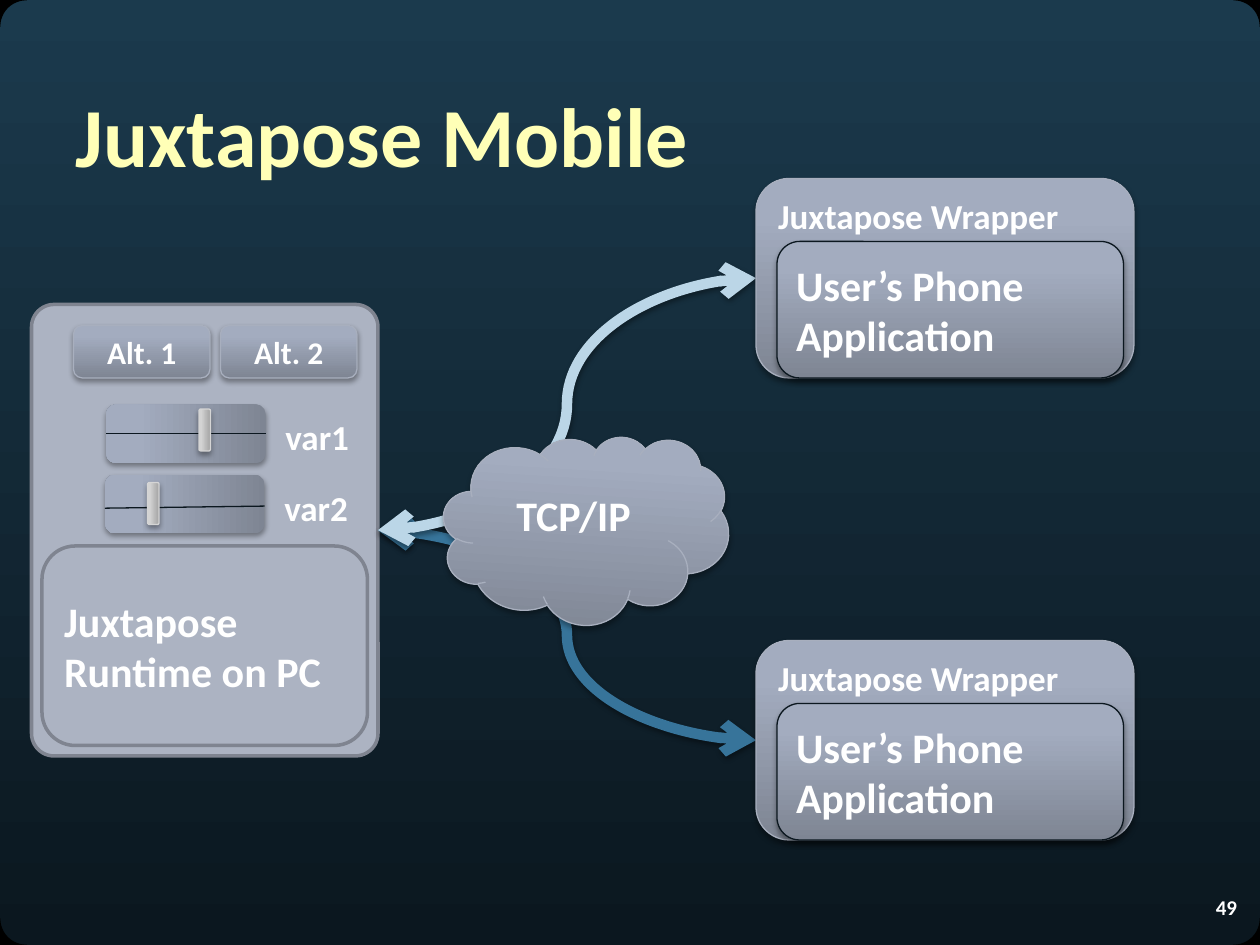
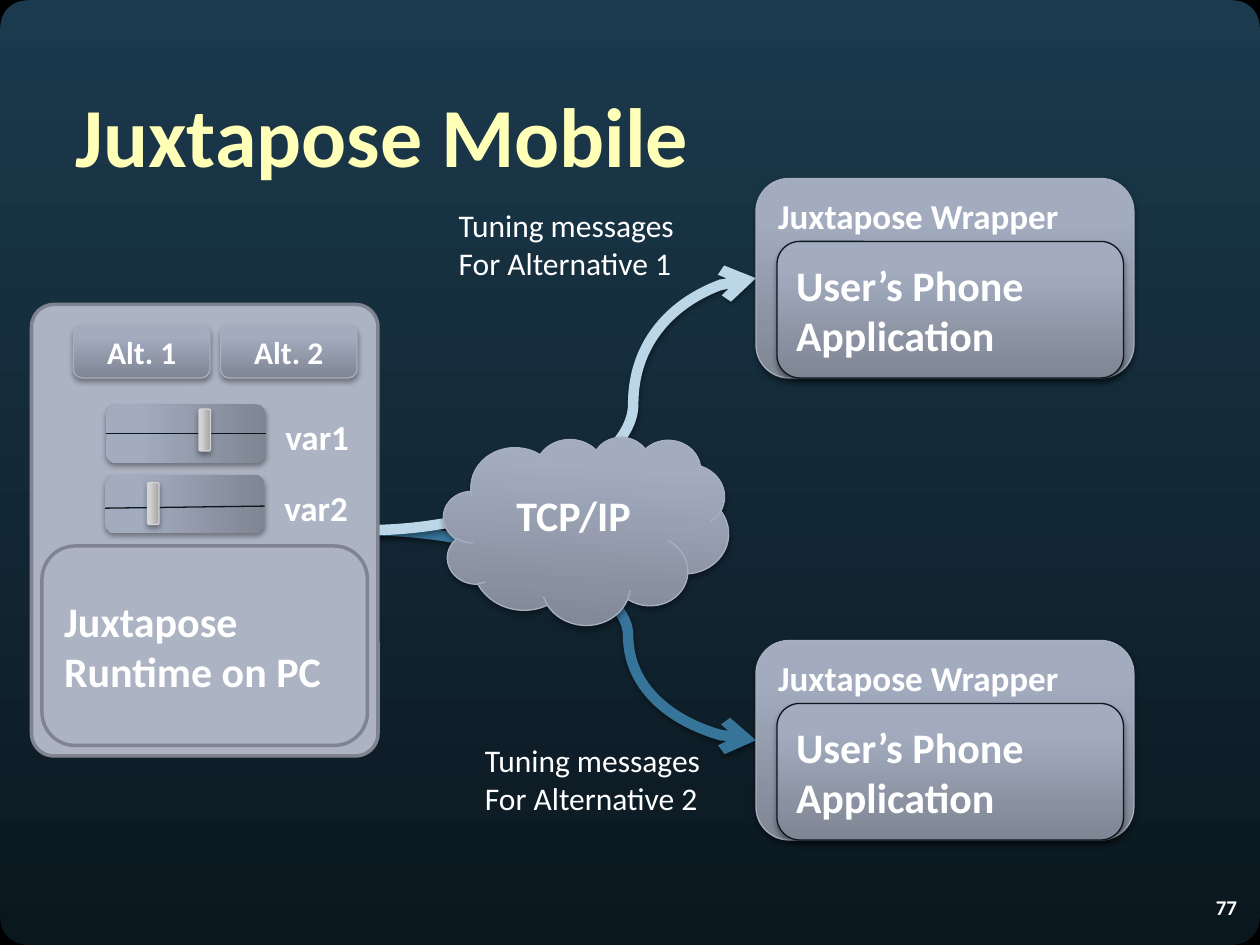
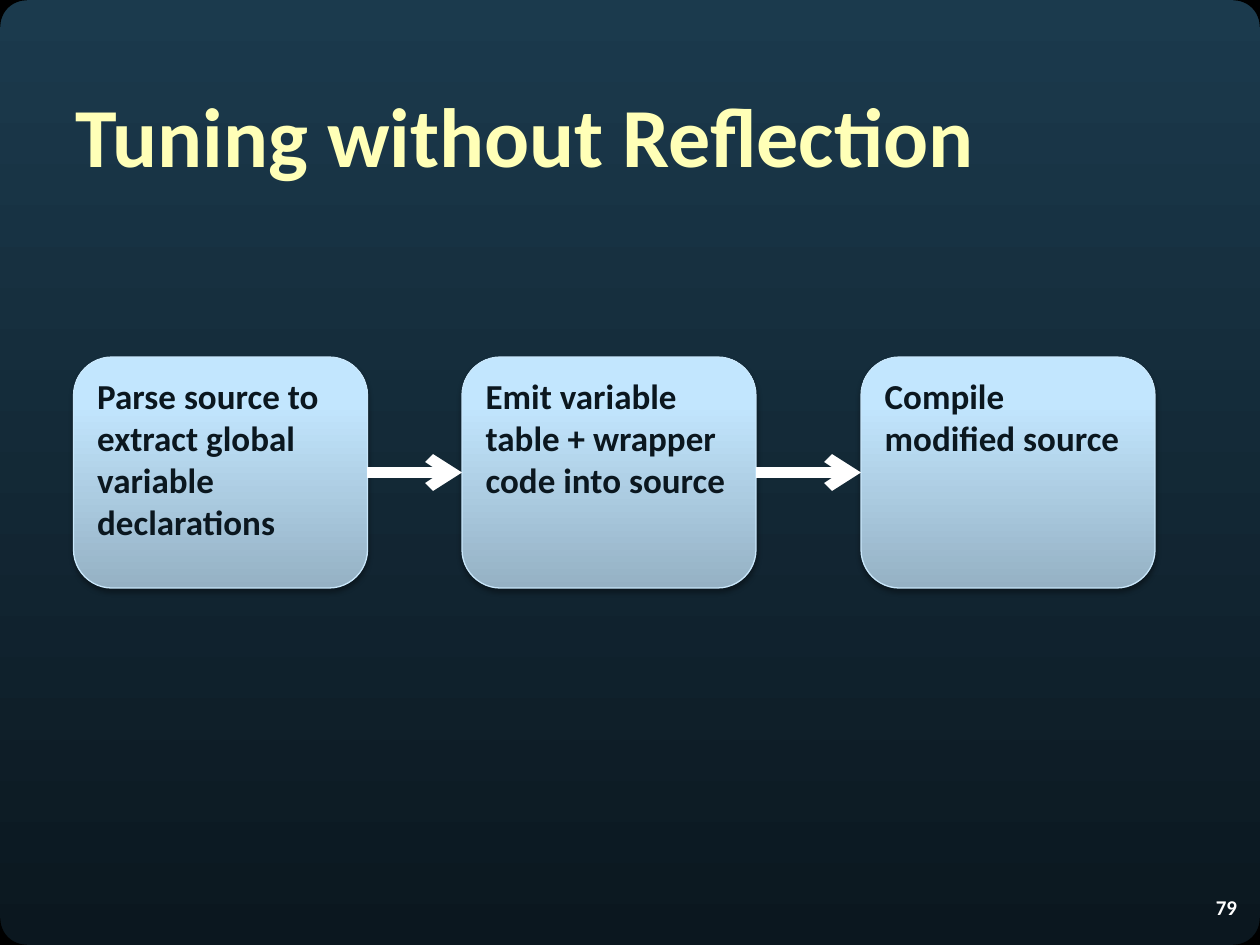
from copy import deepcopy
from math import cos, pi, sin

from lxml import etree
from pptx import Presentation
from pptx.dml.color import RGBColor
from pptx.enum.shapes import MSO_CONNECTOR as LINK, MSO_SHAPE as SHAPE
from pptx.enum.text import MSO_ANCHOR as ANCHOR, PP_ALIGN as ALIGN
from pptx.oxml.ns import qn
from pptx.util import Emu, Pt

SCALE = 7620
WIDTH, HEIGHT = 1200, 900
CORNER_INSET, CORNER_RADIUS = 25, 33

WHITE, BLACK, INK = "FFFFFF", "000000", "0B171F"
TITLE_YELLOW = "FFFFB7"
DEEP_BLUE, PALE_BLUE = "37749A", "BBD6E7"
PANEL, PANEL_EDGE = "ACB3C2", "7F8490"
STEEL_EDGE, KNOB_EDGE, SKY_EDGE = "A8AFBE", "D5D5D5", "C9E7FB"

NIGHT = [(0, INK), (1, "1B3A4D")]
STEEL = [(0, "7E8593"), (0.8, "A3ACBF"), (1, "A4ADC1")]
KNOB = [(0, "A3A3A3"), (0.8, "D3D3D3"), (1, "D4D4D4")]
SKY = [(0, "95B1C4"), (0.8, "C2E6FE"), (1, "C3E7FF")]

SLIDERS = [
    ("var1", 149, 337, (413, 413), (175, 404)),
    ("var2", 148, 404, (484, 482), (126, 474)),
]
WRAPPER_TOPS = (610, 170)


def px(value):
    return Emu(round(value * SCALE))


def colour(hex_value):
    return RGBColor.from_string(hex_value)


def paint_gradient(element, fill, stops):
    fill.gradient()
    stop_list = next(element.iter(qn("a:gsLst")))
    for _ in stops[2:]:
        stop_list.append(deepcopy(stop_list[0]))
    fill.gradient_angle = 90
    for stop, (position, shade) in zip(fill.gradient_stops, stops):
        stop.position = position
        stop.color.rgb = colour(shade)


def cast_shadow(effects, alpha, distance):
    shadow = etree.SubElement(
        effects, qn("a:outerShdw"), blurRad=str(Pt(3.1)), dist=str(Pt(distance)),
        dir="5400000", rotWithShape="0")
    shade = etree.SubElement(shadow, qn("a:srgbClr"), val=BLACK)
    etree.SubElement(shade, qn("a:alpha"), val=str(alpha * 1000))


class Deck:
    text_format = {"name": "Calibri", "bold": True}

    def __init__(self):
        self.presentation = Presentation()
        self.presentation.slide_width = px(WIDTH)
        self.presentation.slide_height = px(HEIGHT)
        master = self.presentation.slide_master
        paint_gradient(master._element, master.background.fill, NIGHT)
        self.slide = None

    def start_slide(self, title, number):
        blank = self.presentation.slide_layouts[6]
        self.slide = self.presentation.slides.add_slide(blank)
        for quarter in range(4):
            self.corner(quarter)
        heading = self.text((60, 70, 1100, 134), title, 48, TITLE_YELLOW)
        heading.text_frame.margin_top = px(10)
        self.text((1100, 840, 90, 48), number, 12,
                  anchor=ANCHOR.MIDDLE, align=ALIGN.RIGHT)

    def corner(self, quarter):
        middle_x = CORNER_INSET if quarter in (1, 2) else WIDTH - CORNER_INSET
        middle_y = CORNER_INSET if quarter in (2, 3) else HEIGHT - CORNER_INSET
        angles = [(quarter + step / 12) * pi / 2 for step in range(13)]
        points = [(px(middle_x + CORNER_RADIUS * cos(angle)),
                   px(middle_y + CORNER_RADIUS * sin(angle))) for angle in angles]
        outline = self.slide.shapes.build_freeform(*points[0])
        outline.add_line_segments(points[1:], close=False)
        arc = outline.convert_to_shape()
        arc.shadow.inherit = False
        arc.fill.background()
        self.stroke(arc.line, BLACK, 10)

    def stroke(self, line, shade, weight):
        line.color.rgb = colour(shade)
        line.width = Pt(weight)

    def set_words(self, shape, words, size, shade, anchor, align):
        frame = shape.text_frame
        frame.word_wrap = True
        frame.vertical_anchor = anchor
        frame.text = words
        for paragraph in frame.paragraphs:
            paragraph.alignment = align
            for run in paragraph.runs:
                for name, value in self.text_format.items():
                    setattr(run.font, name, value)
                run.font.size = Pt(size)
                run.font.color.rgb = colour(shade)

    def text(self, box, words, size, shade=WHITE, anchor=ANCHOR.TOP, align=ALIGN.LEFT):
        label = self.slide.shapes.add_textbox(*map(px, box))
        self.set_words(label, words, size, shade, anchor, align)
        return label

    def shape(self, box, fill, edge=None, weight=0.75, kind=SHAPE.ROUNDED_RECTANGLE,
              turn=0, words=None, size=24, shade=WHITE,
              anchor=ANCHOR.MIDDLE, align=ALIGN.LEFT):
        block = self.slide.shapes.add_shape(kind, *map(px, box))
        block.rotation = turn
        block.shadow.inherit = False
        if isinstance(fill, str):
            block.fill.solid()
            block.fill.fore_color.rgb = colour(fill)
        else:
            paint_gradient(block._element, block.fill, fill)
            cast_shadow(block._element.spPr.find(qn("a:effectLst")), 35, 1.8)
        if edge:
            self.stroke(block.line, edge, weight)
        else:
            block.line.fill.background()
        if words:
            self.set_words(block, words, size, shade, anchor, align)
        return block

    def line(self, start, end, shade, weight=0.75, arrows=(), bend=None):
        kind = LINK.CURVE if bend else LINK.STRAIGHT
        link = self.slide.shapes.add_connector(kind, *map(px, start + end))
        self.stroke(link.line, shade, weight)
        properties = link._element.spPr
        for arrow in arrows:
            etree.SubElement(properties.find(qn("a:ln")), qn(arrow), type="arrow")
        effects = etree.SubElement(properties, qn("a:effectLst"))
        if bend:
            guides = properties.find(qn("a:prstGeom")).get_or_add_avLst()
            etree.SubElement(guides, qn("a:gd"), name="adj1", fmla=f"val {bend}")
            cast_shadow(effects, 38, 1.6)
        return link


def draw_runtime(deck):
    panel = deck.shape((30, 290, 330, 430), PANEL, PANEL_EDGE, 2)
    panel.adjustments[0] = 0.065
    deck.shape((40, 520, 310, 190), PANEL, PANEL_EDGE, 2,
               words="Juxtapose\vRuntime on PC")
    for index in range(2):
        deck.shape((70 + 140 * index, 310, 130, 50), STEEL, STEEL_EDGE,
                   words=f"Alt. {index + 1}", size=18, align=ALIGN.CENTER)
    for variable, left, top, rail, knob in SLIDERS:
        deck.shape((left, top, 56, 152), STEEL, turn=270)
        rail_left = left - 48
        deck.line((rail_left, rail[0]), (rail_left + 152, rail[1]), INK)
        deck.shape((*knob, 40, 11), KNOB, KNOB_EDGE, turn=270)
        deck.text((left + 111, top + 53, 90, 53), variable, 20)


def draw_network(deck, start, bends, arrows):
    for top, shade, bend in zip(WRAPPER_TOPS, (DEEP_BLUE, PALE_BLUE), bends):
        deck.line((start, 505), (720, top + 95), shade, 6, arrows, bend)
        deck.shape((720, top, 360, 190), STEEL, STEEL_EDGE,
                   words="Juxtapose Wrapper", size=20, anchor=ANCHOR.TOP)
        deck.shape((740, top + 60, 330, 130), STEEL, INK,
                   words="User’s Phone\vApplication")
    deck.shape((422, 414, 272, 181), STEEL, STEEL_EDGE, kind=SHAPE.CLOUD, turn=3.5)
    deck.text((480, 460, 150, 60), "TCP/IP", 24)


def draw_two_way(deck):
    deck.start_slide("Juxtapose Mobile", "49")
    draw_runtime(deck)
    draw_network(deck, 360, (50000, 50000), ("a:headEnd", "a:tailEnd"))


def draw_tuning_messages(deck):
    deck.start_slide("Juxtapose Mobile", "77")
    draw_network(deck, 350, (67100, 68400), ("a:tailEnd",))
    for alternative, left, top in ((1, 425, 190), (2, 450, 700)):
        message = deck.text((left, top, 236, 85),
                            f"Tuning messages\nFor Alternative {alternative}", 18)
        for paragraph in message.text_frame.paragraphs:
            paragraph.runs[0].font.bold = False
    draw_runtime(deck)


def draw_pipeline(deck):
    deck.start_slide("Tuning without Reflection", "79")
    stages = [
        (70, "Parse source to extract global variable declarations"),
        (440, "Emit variable table + wrapper code into source"),
        (820, "Compile modified source"),
    ]
    steps = [deck.shape((left, 340, 280, 220), SKY, SKY_EDGE, words=words,
                        size=20, shade=INK, anchor=ANCHOR.TOP)
             for left, words in stages]
    for before, after in zip(steps, steps[1:]):
        arrow = deck.line((0, 0), (0, 0), WHITE, 6, ("a:tailEnd",))
        arrow.begin_connect(before, 3)
        arrow.end_connect(after, 1)


def main():
    deck = Deck()
    draw_two_way(deck)
    draw_tuning_messages(deck)
    draw_pipeline(deck)
    deck.presentation.save("out.pptx")


if __name__ == "__main__":
    main()
